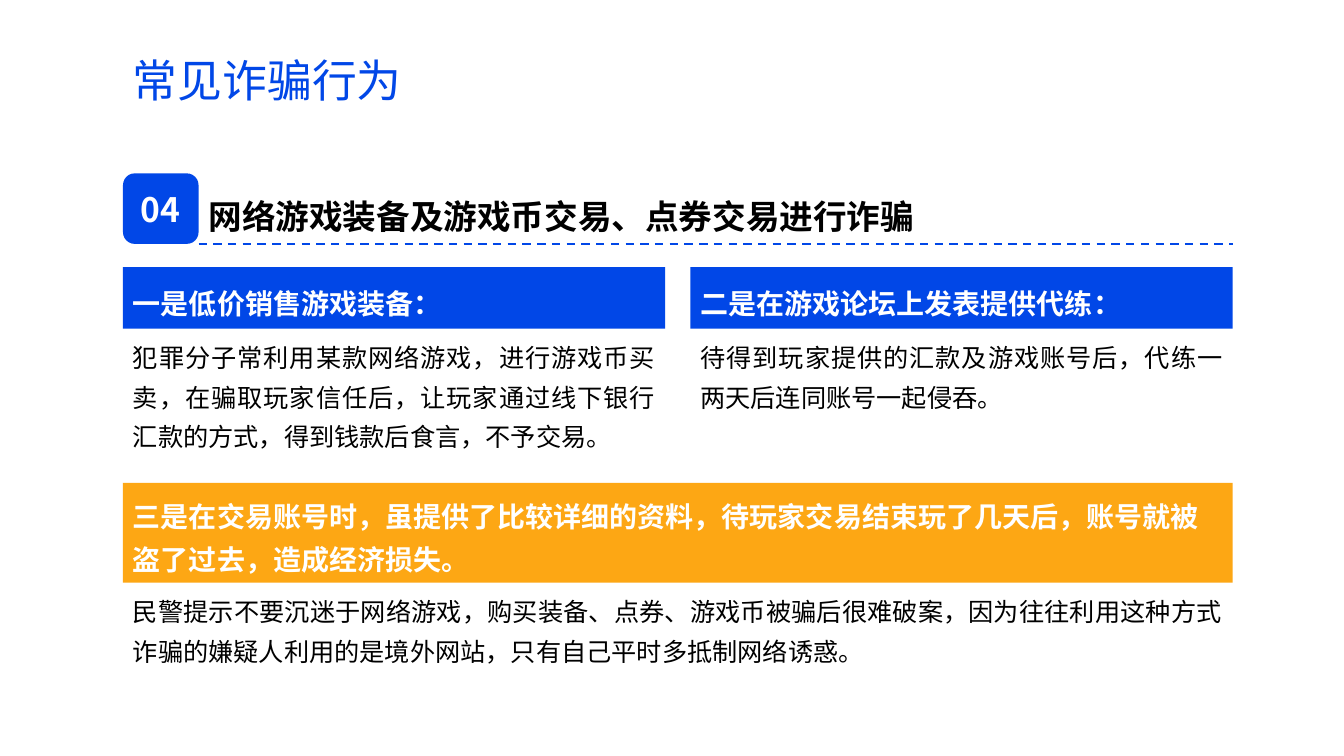
from dataclasses import dataclass
from lxml.etree import SubElement
from pptx import Presentation
from pptx.dml.color import RGBColor as RGB
from pptx.enum.dml import MSO_LINE as Dash
from pptx.enum.shapes import MSO_CONNECTOR as Conn, MSO_SHAPE as Kind
from pptx.enum.text import MSO_ANCHOR as Anchor, MSO_AUTO_SIZE as Auto, PP_ALIGN as Align
from pptx.oxml.ns import qn
from pptx.util import Pt


@dataclass(frozen=True)
class Theme:
    font: str = "Noto Sans CJK SC"
    blue: RGB = RGB(0x01, 0x47, 0xE7)
    gold: RGB = RGB(0xFD, 0xA7, 0x14)
    black: RGB = RGB(0, 0, 0)
    white: RGB = RGB(255, 255, 255)
    title: int = 32
    topic: int = 24
    head: int = 20
    body: int = 18


theme = Theme()
deck = Presentation()
deck.slide_width, deck.slide_height = Pt(960), Pt(540)
slide = deck.slides.add_slide(deck.slide_layouts[6])
shapes = slide.shapes


def write(shape, text, size, color, bold=False, frame=None, para=None):
    """Fill a shape with one paragraph; frame and para hold format values."""
    tf = shape.text_frame
    tf.word_wrap = True
    p = tf.paragraphs[0]
    run = p.add_run()
    run.text = text
    font = {"size": Pt(size), "bold": bold, "name": theme.font}
    for target, values in ((tf, frame), (p, para), (run.font, font)):
        for key, value in (values or {}).items():
            setattr(target, key, value)
    run.font.color.rgb = color
    SubElement(run.font._element, qn("a:ea"), typeface=theme.font)


def block(kind, x, y, w, h, color):
    shape = shapes.add_shape(kind, Pt(x), Pt(y), Pt(w), Pt(h))
    shape.shadow.inherit = False
    shape.fill.solid()
    shape.fill.fore_color.rgb = color
    shape.line.fill.background()
    return shape


left, full, gap = 87.84, 792.72, 18
half = (full - gap) / 2
middle = {"vertical_anchor": Anchor.MIDDLE}
grow = {"auto_size": Auto.SHAPE_TO_FIT_TEXT}
loose = {"line_spacing": 1.3, "alignment": Align.LEFT}

# Title
title = shapes.add_textbox(Pt(left), Pt(36.72), Pt(828), Pt(45.36))
write(title, "常见诈骗行为", theme.title, theme.blue, frame=middle, para={"line_spacing": 0.9})

# Numbered topic with its dashed rule
side, top, tall = 54, 123.84, 50.4
topic = shapes.add_textbox(Pt(left + side), Pt(127.44), Pt(580.32), Pt(41.76))
write(topic, "网络游戏装备及游戏币交易、点券交易进行诈骗", theme.topic, theme.black, True, grow, loose)
badge = block(Kind.ROUNDED_RECTANGLE, left, top, side, tall, theme.blue)
write(badge, "04", theme.topic, theme.white, True, middle, {"alignment": Align.CENTER})
base = Pt(top + tall)
rule = shapes.add_connector(Conn.STRAIGHT, Pt(left + side), base, Pt(left + full), base)
rule.line.color.rgb = theme.blue
rule.line.width = Pt(1.5)
rule.line.dash_style = Dash.DASH
SubElement(rule._element.spPr, qn("a:effectLst"))

# Panels: x, y, width, head height, body height, colour, head, body
panels = [
    (left, 190.8, half, 43.92, 90, theme.blue, "一是低价销售游戏装备：",
     "犯罪分子常利用某款网络游戏，进行游戏币买卖，在骗取玩家信任后，"
     "让玩家通过线下银行汇款的方式，得到钱款后食言，不予交易。"),
    (left + half + gap, 190.8, half, 43.92, 61.92, theme.blue, "二是在游戏论坛上发表提供代练：",
     "待得到玩家提供的汇款及游戏账号后，代练一两天后连同账号一起侵吞。"),
    (left, 344.88, full, 71.28, 61.92, theme.gold,
     "三是在交易账号时，虽提供了比较详细的资料，待玩家交易结束玩了几天后，"
     "账号就被盗了过去，造成经济损失。",
     "民警提示不要沉迷于网络游戏，购买装备、点券、游戏币被骗后很难破案，"
     "因为往往利用这种方式诈骗的嫌疑人利用的是境外网站，只有自己平时多抵制网络诱惑。"),
]
for x, y, w, high, deep, color, head, body in panels:
    note = shapes.add_textbox(Pt(x), Pt(y + high), Pt(w), Pt(deep))
    write(note, body, theme.body, theme.black, frame=grow,
          para={**loose, "alignment": Align.JUSTIFY})
    bar = block(Kind.RECTANGLE, x, y, w, high, color)
    write(bar, head, theme.head, theme.white, True, middle, loose)

deck.save("out.pptx")
